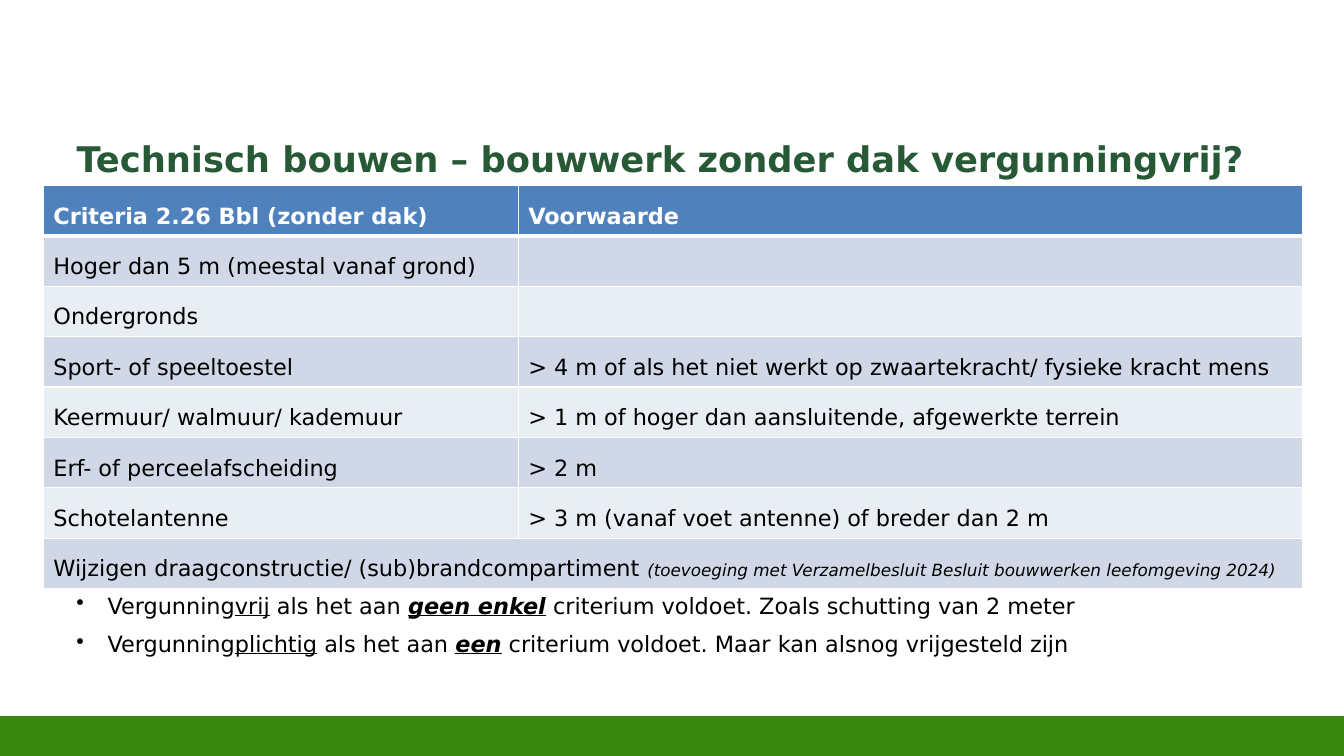
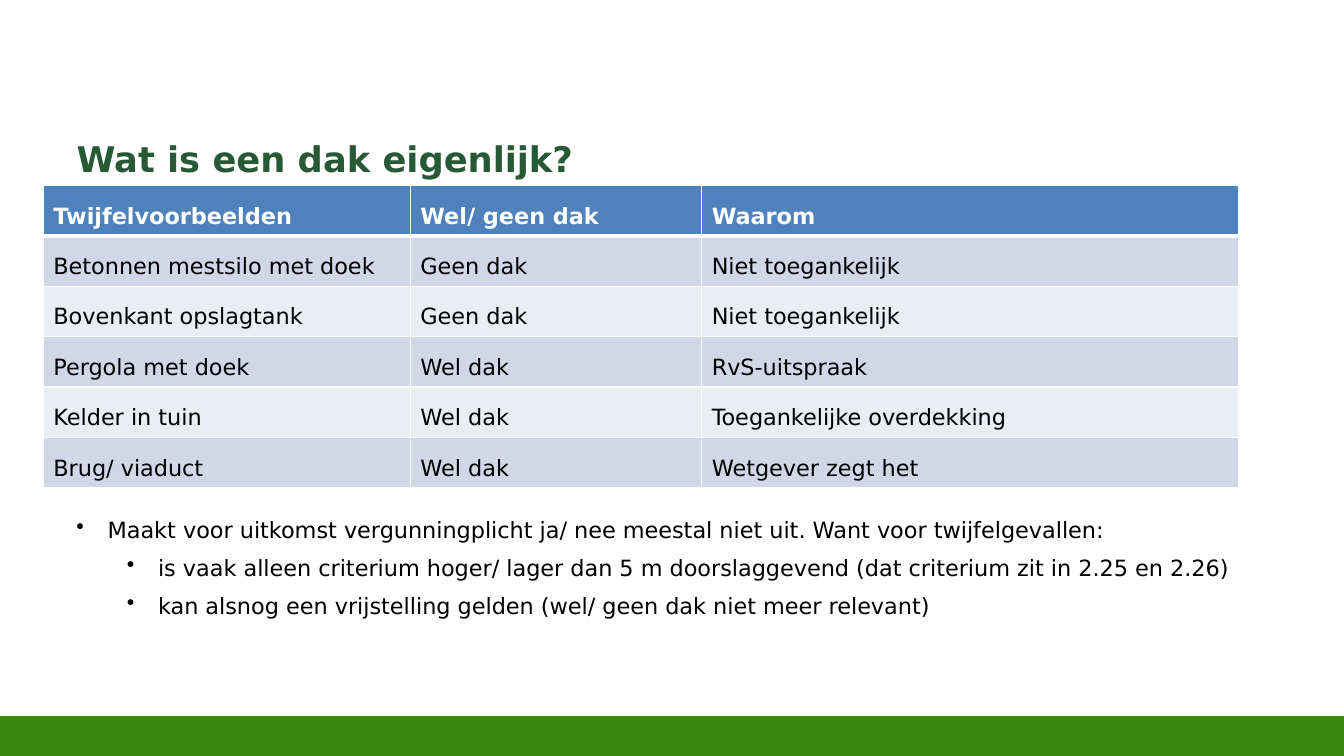
from dataclasses import dataclass, field
from typing import Any

from lxml import etree
from pptx import Presentation
from pptx.dml.color import RGBColor
from pptx.enum.shapes import MSO_SHAPE
from pptx.enum.text import MSO_ANCHOR, MSO_AUTO_SIZE, PP_ALIGN
from pptx.oxml.ns import qn
from pptx.util import Inches, Pt

RECTANGLE = MSO_SHAPE.RECTANGLE
TOP = MSO_ANCHOR.TOP
LEFT = PP_ALIGN.LEFT
NO_AUTOFIT = MSO_AUTO_SIZE.NONE

WHITE = "FFFFFF"
BLACK = "000000"
BAND_GREEN = "39870C"
TITLE_GREEN = "275937"
HEADER_BLUE = "4F81BD"
ROW_FILLS = ("E9EDF4", "D0D8E8")

FONT = "DejaVu Sans"
TEXT_FORMAT = {"name": FONT, "size": Pt(16), "bold": False}
HEADER_FORMAT = {**TEXT_FORMAT, "bold": True}
TITLE_FORMAT = {"name": FONT, "size": Pt(25.2), "bold": True}
UNDERLINED = {"underline": True}
EMPHASIS = {"bold": True, "italic": True, "underline": True}
REMARK = {"size": Pt(12), "italic": True}

SLIDE_WIDTH = 13.33
SLIDE_HEIGHT = 7.5
BAND_TOP = 7.12
TEXT_LEFT = 0.66
TEXT_WIDTH = 12
TABLE_LEFT = 0.43
TABLE_TOP = 1.84
ROW_HEIGHT = 0.48
BULLET_INDENT = 0.31
LEVEL_STEP = 0.5


@dataclass
class Span:
    text: str
    style: dict[str, Any] = field(default_factory=dict)


@dataclass
class Bullet:
    spans: list[Span]
    level: int = 0


@dataclass
class TableSlide:
    title: str
    column_widths: list[float]
    rows: list[list[Any]]
    bullets_top: float
    bullets: list[Bullet]


SLIDES = [
    TableSlide(
        title="Technisch bouwen – bouwwerk zonder dak vergunningvrij?",
        column_widths=[4.71, 7.78],
        rows=[
            ["Criteria 2.26 Bbl (zonder dak)", "Voorwaarde"],
            ["Hoger dan 5 m (meestal vanaf grond)", ""],
            ["Ondergronds", ""],
            ["Sport- of speeltoestel",
             "> 4 m of als het niet werkt op zwaartekracht/ fysieke kracht mens"],
            ["Keermuur/ walmuur/ kademuur",
             "> 1 m of hoger dan aansluitende, afgewerkte terrein"],
            ["Erf- of perceelafscheiding", "> 2 m"],
            ["Schotelantenne", "> 3 m (vanaf voet antenne) of breder dan 2 m"],
            [[Span("Wijzigen draagconstructie/ (sub)brandcompartiment "),
              Span("(toevoeging met Verzamelbesluit Besluit bouwwerken leefomgeving 2024)",
                   REMARK)]],
        ],
        bullets_top=5.76,
        bullets=[
            Bullet([Span("Vergunning"), Span("vrij", UNDERLINED), Span(" als het aan "),
                    Span("geen enkel", EMPHASIS),
                    Span(" criterium voldoet. Zoals schutting van 2 meter")]),
            Bullet([Span("Vergunning"), Span("plichtig", UNDERLINED), Span(" als het aan "),
                    Span("een", EMPHASIS),
                    Span(" criterium voldoet. Maar kan alsnog vrijgesteld zijn")]),
        ],
    ),
    TableSlide(
        title="Wat is een dak eigenlijk?",
        column_widths=[3.64, 2.89, 5.33],
        rows=[
            ["Twijfelvoorbeelden", "Wel/ geen dak", "Waarom"],
            ["Betonnen mestsilo met doek", "Geen dak", "Niet toegankelijk"],
            ["Bovenkant opslagtank", "Geen dak", "Niet toegankelijk"],
            ["Pergola met doek", "Wel dak", "RvS-uitspraak"],
            ["Kelder in tuin", "Wel dak", "Toegankelijke overdekking"],
            ["Brug/ viaduct", "Wel dak", "Wetgever zegt het"],
        ],
        bullets_top=5,
        bullets=[
            Bullet([Span("Maakt voor uitkomst vergunningplicht ja/ nee meestal niet uit. "
                         "Want voor twijfelgevallen:")]),
            Bullet([Span("is vaak alleen criterium hoger/ lager dan 5 m doorslaggevend "
                         "(dat criterium zit in 2.25 en 2.26)")], 1),
            Bullet([Span("kan alsnog een vrijstelling gelden "
                         "(wel/ geen dak niet meer relevant)")], 1),
        ],
    ),
]


def color(value: str) -> RGBColor:
    return RGBColor.from_string(value)


def add_spans(paragraph: Any, spans: list[Span], base: dict[str, Any], text_color: str) -> None:
    for span in spans:
        run = paragraph.add_run()
        run.text = span.text
        for name, value in {**base, **span.style}.items():
            setattr(run.font, name, value)
        run.font.color.rgb = color(text_color)


def add_band(slide: Any) -> None:
    band = slide.shapes.add_shape(
        RECTANGLE, 0, Inches(BAND_TOP), Inches(SLIDE_WIDTH), Inches(SLIDE_HEIGHT - BAND_TOP))
    band.shadow.inherit = False
    band.fill.solid()
    band.fill.fore_color.rgb = color(BAND_GREEN)
    band.line.color.rgb = color(BAND_GREEN)
    band.line.width = Pt(2)


def set_title(slide: Any, text: str) -> None:
    title = slide.shapes.title
    title.left, title.top = Inches(TEXT_LEFT), Inches(1.31)
    title.width, title.height = Inches(TEXT_WIDTH), Inches(0.7)
    frame = title.text_frame
    frame.auto_size = NO_AUTOFIT
    frame.vertical_anchor = TOP
    paragraph = frame.paragraphs[0]
    paragraph.alignment = LEFT
    add_spans(paragraph, [Span(text)], TITLE_FORMAT, TITLE_GREEN)


def set_borders(cell: Any, row_index: int) -> None:
    properties = cell._tc.get_or_add_tcPr()
    widths = {
        "a:lnL": 1,
        "a:lnR": 1,
        "a:lnT": 3 if row_index == 1 else 1,
        "a:lnB": 3 if row_index == 0 else 1,
    }
    for tag, width in widths.items():
        line = etree.SubElement(properties, qn(tag), w=str(Pt(width)))
        fill = etree.SubElement(line, qn("a:solidFill"))
        etree.SubElement(fill, qn("a:srgbClr"), val=WHITE)


def add_table(slide: Any, content: TableSlide) -> None:
    row_count, column_count = len(content.rows), len(content.column_widths)
    table = slide.shapes.add_table(
        row_count, column_count, Inches(TABLE_LEFT), Inches(TABLE_TOP),
        Inches(sum(content.column_widths)), Inches(row_count * ROW_HEIGHT)).table
    for column, width in zip(table.columns, content.column_widths):
        column.width = Inches(width)
    for row_index, row in enumerate(content.rows):
        is_header = row_index == 0
        if len(row) < column_count:
            table.cell(row_index, 0).merge(table.cell(row_index, column_count - 1))
        for column_index in range(column_count):
            cell = table.cell(row_index, column_index)
            set_borders(cell, row_index)
            cell.fill.solid()
            cell.fill.fore_color.rgb = color(HEADER_BLUE if is_header else ROW_FILLS[row_index % 2])
            value = row[column_index] if column_index < len(row) else ""
            if value:
                paragraph = cell.text_frame.paragraphs[0]
                paragraph.line_spacing = 1.5
                add_spans(paragraph, [Span(value)] if isinstance(value, str) else value,
                          HEADER_FORMAT if is_header else TEXT_FORMAT,
                          WHITE if is_header else BLACK)


def add_bullets(slide: Any, top: float, bullets: list[Bullet]) -> None:
    frame = slide.shapes.add_textbox(
        Inches(TEXT_LEFT), Inches(top), Inches(TEXT_WIDTH), Inches(BAND_TOP - top)).text_frame
    frame.word_wrap = True
    for index, bullet in enumerate(bullets):
        paragraph = frame.add_paragraph() if index else frame.paragraphs[0]
        paragraph.level = bullet.level
        properties = paragraph._p.get_or_add_pPr()
        properties.set("marL", str(Inches(BULLET_INDENT + bullet.level * LEVEL_STEP)))
        properties.set("indent", str(-Inches(BULLET_INDENT)))
        etree.SubElement(properties, qn("a:buChar"), char="•")
        paragraph.line_spacing = Pt(24)
        paragraph.space_before = Pt(3.2 if index else 0)
        add_spans(paragraph, bullet.spans, TEXT_FORMAT, BLACK)


def main() -> None:
    presentation = Presentation()
    presentation.slide_width = Inches(SLIDE_WIDTH)
    presentation.slide_height = Inches(SLIDE_HEIGHT)
    title_only = presentation.slide_layouts[5]
    for content in SLIDES:
        slide = presentation.slides.add_slide(title_only)
        add_band(slide)
        set_title(slide, content.title)
        add_bullets(slide, content.bullets_top, content.bullets)
        add_table(slide, content)
    presentation.save("out.pptx")


if __name__ == "__main__":
    main()
